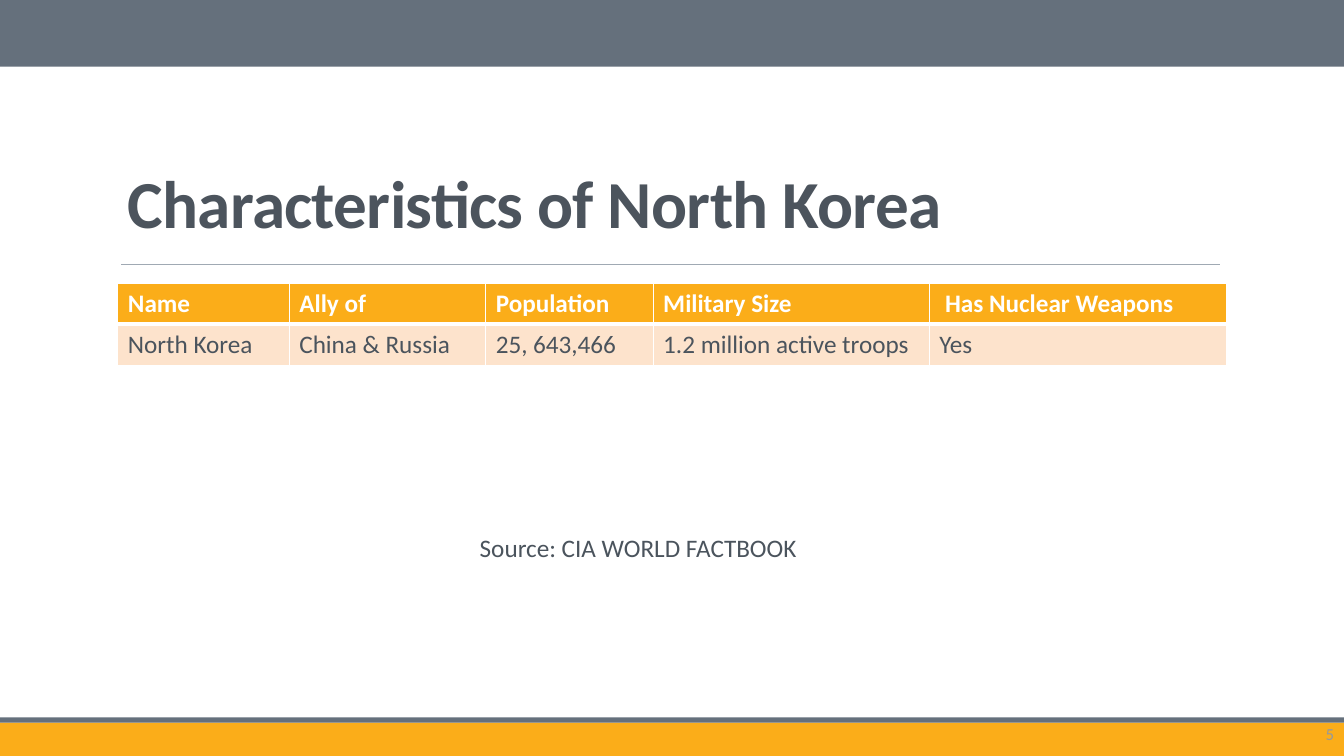
from dataclasses import dataclass

from lxml import etree
from pptx import Presentation
from pptx.dml.color import RGBColor
from pptx.enum.shapes import MSO_CONNECTOR, MSO_SHAPE
from pptx.enum.text import MSO_ANCHOR, PP_ALIGN
from pptx.oxml.ns import qn
from pptx.util import Cm, Pt

RECTANGLE = MSO_SHAPE.RECTANGLE
STRAIGHT = MSO_CONNECTOR.STRAIGHT
TOP, MIDDLE, BOTTOM = MSO_ANCHOR.TOP, MSO_ANCHOR.MIDDLE, MSO_ANCHOR.BOTTOM
LEFT, RIGHT = PP_ALIGN.LEFT, PP_ALIGN.RIGHT


@dataclass(frozen=True)
class Theme:
    """Colours, font and type sizes of the deck."""
    font: str = "Calibri"
    slate: str = "65707C"
    amber: str = "FBAD19"
    peach: str = "FDE3CC"
    white: str = "FFFFFF"
    rule: str = "A0A9B3"
    title: str = "4C545D"
    body: str = "4B545D"
    number: str = "96999C"
    title_size: int = 48
    body_size: int = 18
    number_size: int = 12


THEME = Theme()
PAGE_WIDTH, PAGE_HEIGHT = 33.87, 19.05
COLUMN_WIDTHS = (4.32, 4.95, 4.22, 6.96, 7.49)
FACTS = (
    ("Name", "Ally of", "Population", "Military Size", " Has Nuclear Weapons"),
    ("North Korea", "China & Russia", "25, 643,466", "1.2 million active troops", "Yes"),
)


def write_text(frame, text, size=THEME.body_size, color=THEME.body, bold=False,
               align=LEFT, line_spacing=None, tracking=None):
    """Write one formatted paragraph into a text frame."""
    para = frame.paragraphs[0]
    para.alignment = align
    if line_spacing:
        para.line_spacing = line_spacing
    run = para.add_run()
    run.text = text
    run.font.name = THEME.font
    run.font.size = Pt(size)
    run.font.bold = bold
    run.font.color.rgb = RGBColor.from_string(color)
    if tracking:
        run.font._element.set("spc", str(int(tracking * 100)))


def add_text_box(page, box, text, anchor=TOP, **formatting):
    """Place a wrapping text box in the given box."""
    frame = page.shapes.add_textbox(*map(Cm, box)).text_frame
    frame.word_wrap = True
    frame.vertical_anchor = anchor
    write_text(frame, text, **formatting)


def add_band(page, box, color):
    """Place a plain colour band in the given box."""
    band = page.shapes.add_shape(RECTANGLE, *map(Cm, box))
    band.shadow.inherit = False
    band.fill.solid()
    band.fill.fore_color.rgb = RGBColor.from_string(color)
    band.line.fill.background()


def add_header(page, box):
    """Place the top band, the title and the rule below it."""
    left, top, width, height = box
    add_band(page, (0, 0, PAGE_WIDTH, 1.68), THEME.slate)
    add_text_box(page, box, "Characteristics of North Korea", anchor=BOTTOM,
                 size=THEME.title_size, color=THEME.title, bold=True,
                 line_spacing=0.85, tracking=-0.5)
    rule_top = Cm(top + height + 0.43)
    rule = page.shapes.add_connector(
        STRAIGHT, Cm(left + 0.08), rule_top, Cm(left + width - 0.17), rule_top)
    rule.line.color.rgb = RGBColor.from_string(THEME.rule)
    rule.line.width = Pt(0.5)
    etree.SubElement(rule._element.spPr, qn("a:effectLst"))


def set_borders(cell, **widths):
    """Give the cell white borders with widths in points by side."""
    properties = cell._tc.get_or_add_tcPr()
    for position, side in enumerate("LRTB"):
        line = etree.Element(qn(f"a:ln{side}"), w=str(Pt(widths.get(side, 1))))
        fill = etree.SubElement(line, qn("a:solidFill"))
        etree.SubElement(fill, qn("a:srgbClr"), val=THEME.white)
        properties.insert(position, line)


def add_facts_table(page, box):
    """Place the table of facts in the given box."""
    table = page.shapes.add_table(len(FACTS), len(COLUMN_WIDTHS), *map(Cm, box)).table
    for column, width in zip(table.columns, COLUMN_WIDTHS):
        column.width = Cm(width)
    for row_index, facts in enumerate(FACTS):
        is_header = row_index == 0
        for column_index, fact in enumerate(facts):
            cell = table.cell(row_index, column_index)
            cell.fill.solid()
            cell.fill.fore_color.rgb = RGBColor.from_string(
                THEME.amber if is_header else THEME.peach)
            set_borders(cell, **{"B" if is_header else "T": 3})
            write_text(cell.text_frame, fact, bold=is_header,
                       color=THEME.white if is_header else THEME.body)


def add_footer(page, box):
    """Place the bottom bands and the page number."""
    left, top, width, height = box
    stripe = 0.13
    add_band(page, (left, top + stripe, width, height - stripe), THEME.amber)
    add_band(page, (left, top, width, stripe), THEME.slate)
    add_text_box(page, (left + width - 3.63, top - 0.1, 3.63, 1.02), "5", anchor=MIDDLE,
                 size=THEME.number_size, color=THEME.number, align=RIGHT)


def main():
    """Build and save the deck."""
    deck = Presentation()
    deck.slide_width, deck.slide_height = Cm(PAGE_WIDTH), Cm(PAGE_HEIGHT)
    page = deck.slides.add_slide(deck.slide_layouts[6])
    add_footer(page, (0, 18.08, PAGE_WIDTH, 0.97))
    add_header(page, (2.97, 2.18, 27.94, 4.04))
    add_facts_table(page, (2.97, 7.14, sum(COLUMN_WIDTHS), 2.06))
    add_text_box(page, (11.84, 13.28, 9.14, 1.02), "Source: CIA WORLD FACTBOOK")
    deck.save("out.pptx")


if __name__ == "__main__":
    main()
